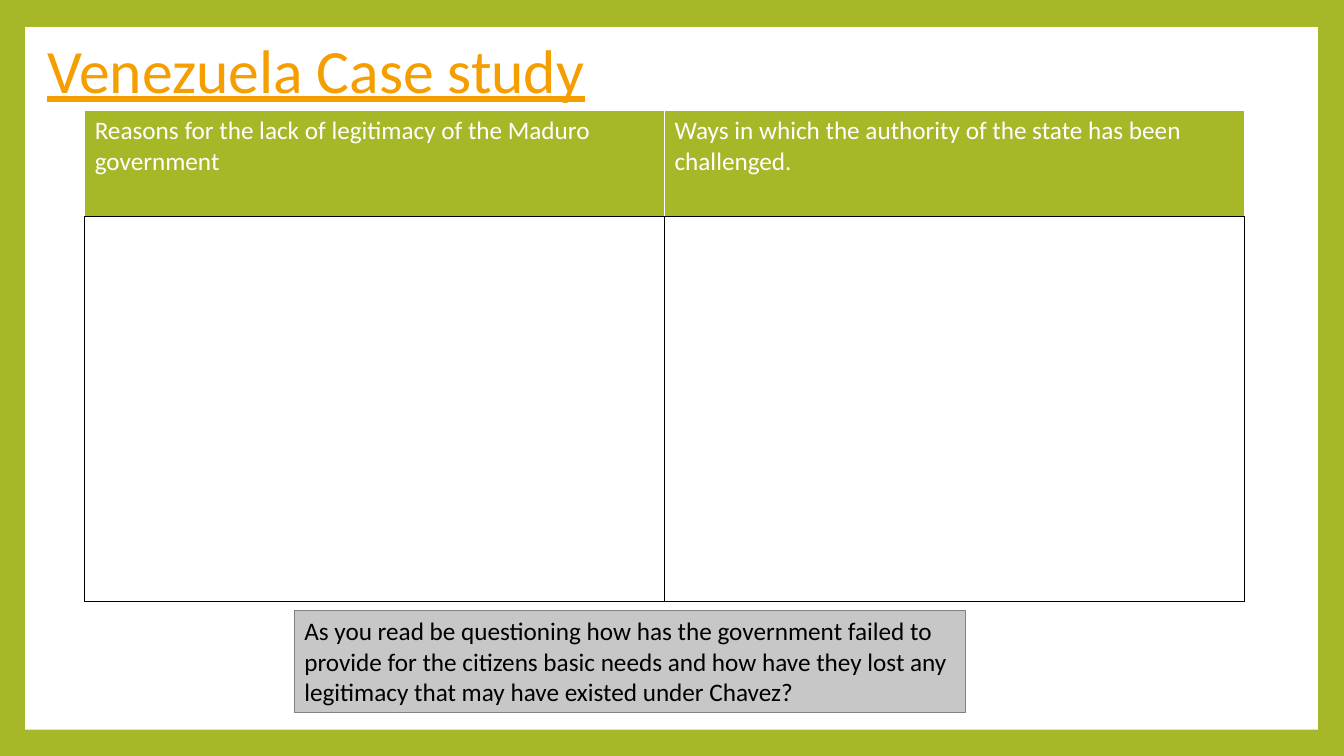
from pptx import Presentation
from pptx.dml.color import RGBColor
from pptx.enum import shapes, text
from pptx.oxml import parse_xml
from pptx.oxml.ns import nsdecls
from pptx.util import Inches, Pt

COLORS = {
    "green": "A6B727",
    "white": "FFFFFF",
    "orange": "F59E00",
    "black": "000000",
    "grey": "C7C7C8",
    "outline": "818183",
}
FONT = "Calibri"
HEADINGS = [
    "Reasons for the lack of legitimacy of the Maduro government",
    "Ways in which the authority of the state has been challenged.",
]
PROMPT = (
    "As you read be questioning how has the government failed to provide for the "
    "citizens basic needs and how have they lost any legitimacy that may have "
    "existed under Chavez?"
)


def rgb(name):
    """Return the named colour."""
    return RGBColor.from_string(COLORS[name])


def write(frame, words, size, color, underline=False):
    """Put one left-aligned, formatted paragraph in a text frame."""
    frame.text = words
    frame.word_wrap = True
    para = frame.paragraphs[0]
    para.alignment = text.PP_ALIGN.LEFT
    font = para.runs[0].font
    font.name, font.size, font.underline = FONT, Pt(size), underline
    font.color.rgb = rgb(color)
    return para


def add_panel(page, left, top, width, height, fill, line=None):
    """Add a flat rectangle, outlined if a line colour is given."""
    panel = page.shapes.add_shape(
        shapes.MSO_SHAPE.RECTANGLE,
        Inches(left), Inches(top), Inches(width), Inches(height))
    panel.shadow.inherit = False
    panel.fill.solid()
    panel.fill.fore_color.rgb = rgb(fill)
    if line:
        panel.line.color.rgb = rgb(line)
        panel.line.width = Pt(0.79)
    else:
        panel.line.fill.background()
    return panel


def add_title(page, words):
    """Add the underlined slide title."""
    box = page.shapes.add_textbox(Inches(0.37), Inches(0), Inches(11.5), Inches(1.45))
    para = write(box.text_frame, words, 44, "orange", underline=True)
    para.line_spacing = 0.9
    box.text_frame.vertical_anchor = text.MSO_ANCHOR.MIDDLE


def set_borders(cell, **sides):
    """Draw 1 pt cell borders in the named colours, given in schema order."""
    props = cell._tc.get_or_add_tcPr()
    for position, (side, color) in enumerate(sides.items()):
        props.insert(position, parse_xml(
            f'<a:ln{side} {nsdecls("a")} w="{Pt(1)}"><a:solidFill>'
            f'<a:srgbClr val="{COLORS[color]}"/></a:solidFill></a:ln{side}>'))


def add_answer_table(page, headings):
    """Add a table with green headings above empty answer cells."""
    frame = page.shapes.add_table(
        2, len(headings), Inches(0.84), Inches(1.1), Inches(11.5), Inches(4.87))
    table = frame.table
    for row, height in zip(table.rows, (1.05, 3.82)):
        row.height = Inches(height)
    for column, heading in enumerate(headings):
        table.columns[column].width = Inches(5.75)
        header, answer = table.cell(0, column), table.cell(1, column)
        header.fill.solid()
        header.fill.fore_color.rgb = rgb("green")
        write(header.text_frame, heading, 18, "white")
        set_borders(header, L="white", R="white", T="white", B="black")
        answer.fill.background()
        set_borders(answer, L="black", R="black", T="black", B="black")


def add_prompt(page, words):
    """Add the grey reading prompt under the table."""
    panel = add_panel(page, 2.92, 6.06, 6.66, 1.01, "grey", "outline")
    write(panel.text_frame, words, 18, "black")
    panel.text_frame.vertical_anchor = text.MSO_ANCHOR.TOP


def main():
    """Build and save the slide."""
    deck = Presentation()
    deck.slide_width, deck.slide_height = Inches(13.33), Inches(7.5)
    page = deck.slides.add_slide(deck.slide_layouts[6])
    page.background.fill.solid()
    page.background.fill.fore_color.rgb = rgb("green")
    add_panel(page, 0.25, 0.27, 12.82, 6.97, "white")
    add_title(page, "Venezuela Case study")
    add_answer_table(page, HEADINGS)
    add_prompt(page, PROMPT)
    deck.save("out.pptx")


if __name__ == "__main__":
    main()
